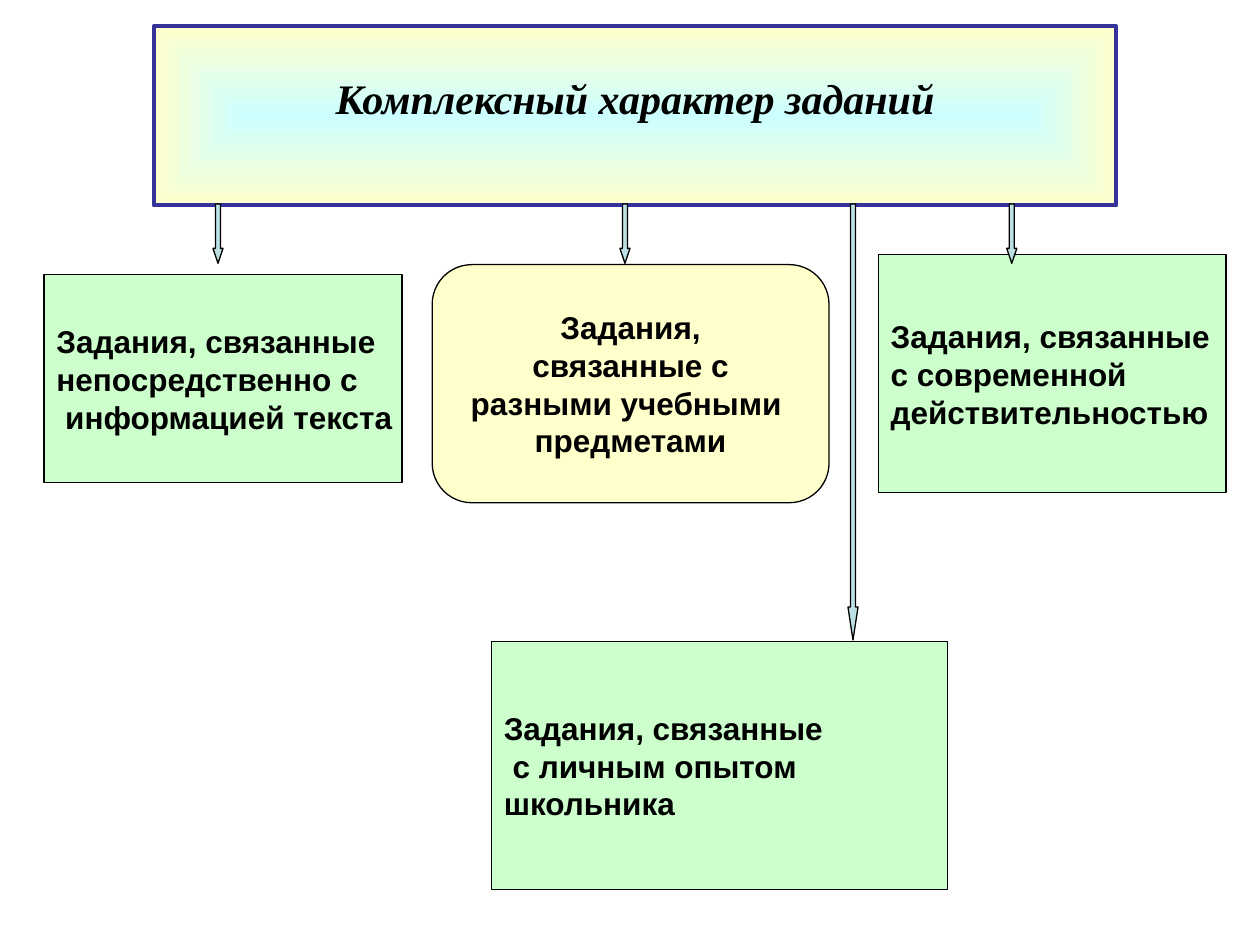
import pptx
import pptx.util
import pptx.dml.color
import pptx.enum.shapes
import pptx.enum.text
import pptx.oxml
import pptx.oxml.ns

# Grid of square cells: 100 columns by 75 rows
COLUMNS, ROWS = 100, 75
CELL = pptx.util.Inches(0.1)

INK, GREEN, CREAM, AQUA = "000000", "CCFFCC", "FFFFCC", "CCFFFF"
NAVY, ARROW_BLUE = "333399", "BBE0E3"

SHAPES = pptx.enum.shapes.MSO_SHAPE
ALIGN = pptx.enum.text.PP_ALIGN

HEADING_BOX = (12.2, 2.1, 76.4, 14.2)
# Box, shape, alignment and lines of each kind of task
TASKS = [
    ((69.7, 20.2, 27.6, 18.9), SHAPES.RECTANGLE, GREEN, ALIGN.JUSTIFY,
     ["Задания, связанные ", "с современной ", "действительностью"]),
    ((34.3, 21, 31.5, 18.9), SHAPES.ROUNDED_RECTANGLE, CREAM, ALIGN.CENTER,
     ["Задания,", " связанные с ", "разными учебными ", "предметами"]),
    ((3.5, 21.8, 28.4, 16.5), SHAPES.RECTANGLE, GREEN, ALIGN.JUSTIFY,
     ["Задания, связанные ", "непосредственно с", " информацией текста"]),
    ((39, 50.9, 36.2, 19.7), SHAPES.RECTANGLE, GREEN, ALIGN.JUSTIFY,
     ["Задания, связанные", " с личным опытом ", "школьника"]),
]
# Left edge, length and head ratio of each arrow
ARROWS = [(67.3, 34.6, 3.27), (16.9, 4.7, 1.48),
          (79.9, 4.7, 1.48), (49.2, 4.7, 1.48)]
ARROW_TOP, ARROW_WIDTH = 16.2, 0.8


def color(hex_string):
    return pptx.dml.color.RGBColor.from_string(hex_string)


def add_block(slide, kind, box, fill, line=INK, line_width=0.75):
    block = slide.shapes.add_shape(kind, *(round(n * CELL) for n in box))
    block.shadow.inherit = False
    block.fill.solid()
    block.fill.fore_color.rgb = color(fill)
    block.line.color.rgb = color(line)
    block.line.width = pptx.util.Pt(line_width)
    return block


def write(block, lines, size=18, font="Arial", italic=False,
          align=ALIGN.CENTER):
    frame = block.text_frame
    frame.word_wrap = False
    frame.vertical_anchor = pptx.enum.text.MSO_ANCHOR.MIDDLE
    for index, line in enumerate(lines):
        paragraph = frame.add_paragraph() if index else frame.paragraphs[0]
        paragraph.alignment = align
        run = paragraph.add_run()
        run.text = line
        run.font.size = pptx.util.Pt(size)
        run.font.name = font
        run.font.bold = True
        run.font.italic = italic
        run.font.color.rgb = color(INK)


def fill_from_center(block, inner, outer):
    block.fill.gradient()
    for stop, shade in zip(block.fill.gradient_stops, (inner, outer)):
        stop.color.rgb = color(shade)
    # Turn the linear gradient into one that spreads from the middle
    linear = block._element.spPr.find(".//" + pptx.oxml.ns.qn("a:lin"))
    spread = pptx.oxml.parse_xml(
        f'<a:path {pptx.oxml.ns.nsdecls("a")} path="shape">'
        '<a:fillToRect l="50000" t="50000" r="50000" b="50000"/></a:path>')
    linear.getparent().replace(linear, spread)


def add_heading(slide, box):
    heading = add_block(slide, SHAPES.RECTANGLE, box, CREAM, NAVY, 2.25)
    fill_from_center(heading, AQUA, CREAM)
    write(heading, ["Комплексный характер заданий"], size=24,
          font="Times New Roman", italic=True)
    # Lift the words above the middle
    heading.text_frame.margin_bottom = pptx.util.Inches(0.34)


def add_task(slide, box, kind, fill, align, lines):
    write(add_block(slide, kind, box, fill), lines, align=align)


def add_arrow(slide, box, head):
    arrow = add_block(slide, SHAPES.DOWN_ARROW, box, ARROW_BLUE)
    arrow.adjustments[0] = 0.5
    arrow.adjustments[1] = head


def main():
    deck = pptx.Presentation()
    deck.slide_width, deck.slide_height = COLUMNS * CELL, ROWS * CELL
    slide = deck.slides.add_slide(deck.slide_layouts[6])

    # Heading and the kinds of tasks
    add_heading(slide, HEADING_BOX)
    for task in TASKS:
        add_task(slide, *task)

    # Arrows from the heading to the tasks
    for left, length, head in ARROWS:
        add_arrow(slide, (left, ARROW_TOP, ARROW_WIDTH, length), head)

    deck.save("out.pptx")


if __name__ == "__main__":
    main()
